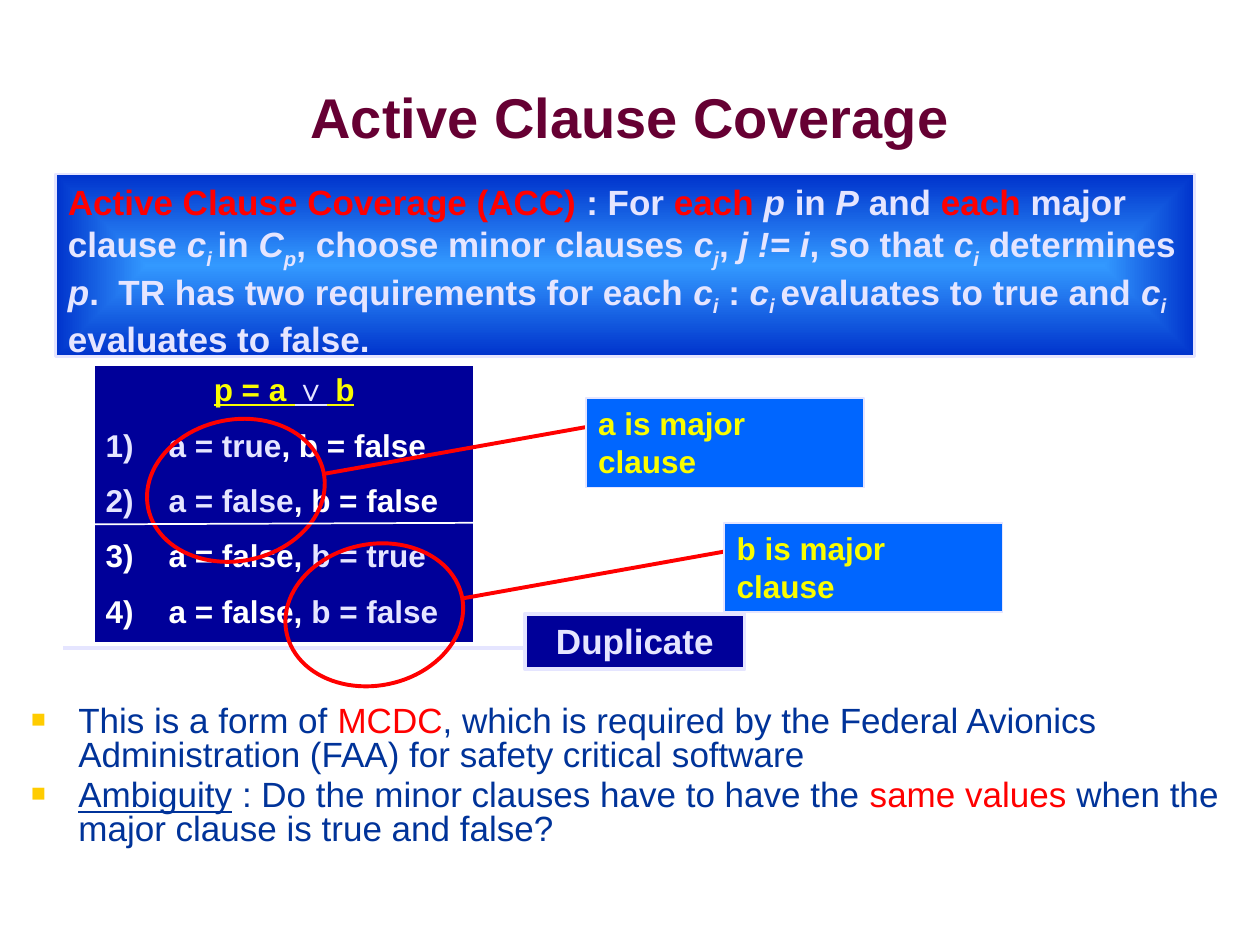
from lxml import etree
from pptx import Presentation
from pptx.dml.color import RGBColor
from pptx.enum.shapes import MSO_CONNECTOR as Line, MSO_SHAPE as Shape
from pptx.enum.text import MSO_ANCHOR as Anchor, PP_ALIGN as Align
from pptx.oxml.ns import qn
from pptx.util import Cm, Pt

FONT = "Arial"
RED, YELLOW, PALE, WHITE = "FF0000", "FAFD00", "E5E5FF", "FFFFFF"
NAVY, BLUE, TEXT_BLUE = "000099", "0066FF", "003399"
INDENT = 1.27


def rgb(value):
    return RGBColor.from_string(value)


def add_child(parent, tag, **attributes):
    return etree.SubElement(parent, qn(tag), attributes)


def add_runs(paragraph, runs, size, bold=True):
    for wording, color, marks in runs:
        run = paragraph.add_run()
        run.text = wording
        font = run.font
        font.name, font.size, font.bold = FONT, Pt(size), bold
        font.color.rgb = rgb(color)
        font.italic = "i" in marks
        font.underline = "u" in marks
        if "s" in marks:
            font._element.set("baseline", "-25000")


def set_indent(paragraph, indent):
    properties = paragraph._p.get_or_add_pPr()
    properties.set("marL", str(Cm(indent)))
    properties.set("indent", str(-Cm(indent)))
    return properties


def add_panel(slide, box, fill, line, width, kind=Shape.RECTANGLE):
    panel = slide.shapes.add_shape(kind, *map(Cm, box))
    panel.shadow.inherit = False
    if fill:
        panel.fill.solid()
        panel.fill.fore_color.rgb = rgb(fill)
    else:
        panel.fill.background()
    panel.line.color.rgb = rgb(line)
    panel.line.width = Pt(width)
    frame = panel.text_frame
    frame.word_wrap = True
    frame.vertical_anchor = Anchor.TOP
    frame.paragraphs[0].alignment = Align.LEFT
    return panel


def add_line(slide, start, end, color, width):
    line = slide.shapes.add_connector(Line.STRAIGHT, *map(Cm, (*start, *end)))
    line.line.color.rgb = rgb(color)
    line.line.width = Pt(width)
    add_child(line._element.spPr, "a:effectLst")


def add_title(slide, box):
    title = slide.shapes.title
    title.left, title.top, title.width, title.height = map(Cm, box)
    title.text_frame.vertical_anchor = Anchor.MIDDLE
    heading = title.text_frame.paragraphs[0]
    heading.alignment = Align.CENTER
    add_runs(heading, [("Active Clause Coverage", "660033", "")], 32)


def indexed(letter, index):
    return [(letter, PALE, "i"), (index, PALE, "is")]


def add_definition(slide, box):
    panel = add_panel(slide, box, BLUE, PALE, 1.5)
    panel.fill.gradient()
    for stop, color in zip(panel.fill.gradient_stops, ("3399FF", "0033CC")):
        stop.color.rgb = rgb(color)
    gradient = panel._element.spPr.find(qn("a:gradFill"))
    gradient.remove(gradient.find(qn("a:lin")))
    center = add_child(gradient, "a:path", path="shape")
    add_child(center, "a:fillToRect", l="50000", t="50000", r="50000", b="50000")
    add_runs(panel.text_frame.paragraphs[0], [
        ("Active Clause Coverage (ACC)", RED, ""), (" : For ", PALE, ""),
        ("each ", RED, ""), ("p", PALE, "i"), (" in ", PALE, ""),
        ("P", PALE, "i"), (" and ", PALE, ""), ("each", RED, ""),
        (" major clause ", PALE, ""), *indexed("c", "i "),
        ("in ", PALE, ""), *indexed("C", "p"),
        (", choose minor clauses ", PALE, ""), *indexed("c", "j"),
        (", ", PALE, ""), ("j != i", PALE, "i"),
        (", so that ", PALE, ""), *indexed("c", "i"),
        (" determines ", PALE, ""), ("p", PALE, "i"),
        (".  TR has two requirements for each ", PALE, ""), *indexed("c", "i"),
        (" : ", PALE, ""), *indexed("c", "i "),
        ("evaluates to true and ", PALE, ""), *indexed("c", "i"),
        (" evaluates to false.", PALE, ""),
    ], 20)


def add_cases(slide, box):
    left, top, width, _ = box
    frame = add_panel(slide, box, NAVY, WHITE, 2.25).text_frame
    predicate = frame.paragraphs[0]
    predicate.alignment = Align.CENTER
    set_indent(predicate, INDENT)
    add_runs(predicate, [("p = a ", YELLOW, "u"), ("∨", PALE, "u"),
                         (" b", YELLOW, "u")], 18)
    cases = [
        [("a = true", PALE, ""), (", b = false", WHITE, "")],
        [("a = false", PALE, ""), (", b = false", WHITE, "")],
        [("a = false, ", WHITE, ""), ("b = true", PALE, "")],
        [("a = false, ", WHITE, ""), ("b = false", PALE, "")],
    ]
    for case in cases:
        row = frame.add_paragraph()
        row.alignment = Align.LEFT
        add_child(set_indent(row, INDENT), "a:buAutoNum", type="arabicParenR")
        row.space_before = Pt(10)
        add_runs(row, case, 18)
    return (left, top + 3.23), (left + width, top + 3.2)


def add_duplicate(slide, left, top):
    add_line(slide, (left, top + 0.69), (left + 9.42, top + 0.69), PALE, 2.25)
    label = add_panel(slide, (left + 9.32, top, 4.42, 1.12), NAVY, PALE, 2.25)
    duplicate = label.text_frame.paragraphs[0]
    duplicate.alignment = Align.CENTER
    add_runs(duplicate, [("Duplicate", PALE, "")], 20)


def add_callout(slide, left, top, clause):
    add_line(slide, (left + 3.22, top + 1.52), (left + 8.48, top + 0.58), RED, 2.25)
    note = add_panel(slide, (left + 8.48, top, 5.61, 1.8), BLUE, PALE, 1)
    add_runs(note.text_frame.paragraphs[0],
             [(f"{clause} is major clause", YELLOW, "")], 18)
    ring = add_panel(slide, (left, top + 0.05, 2.85, 3.61), None, RED, 2.25, Shape.OVAL)
    ring.rotation = 78.5


def add_remarks(slide, box):
    frame = slide.shapes.add_textbox(*map(Cm, box)).text_frame
    frame.word_wrap = True
    remarks = [
        [("This is a form of ", TEXT_BLUE, ""), ("MCDC", RED, ""),
         (", which is required by the Federal Avionics Administration (FAA) "
          "for safety critical software", TEXT_BLUE, "")],
        [("Ambiguity", TEXT_BLUE, "u"),
         (" : Do the minor clauses have to have the ", TEXT_BLUE, ""),
         ("same values ", RED, ""),
         ("when the major clause is true and false?", TEXT_BLUE, "")],
    ]
    for position, remark in enumerate(remarks):
        bullet = frame.add_paragraph() if position else frame.paragraphs[0]
        properties = set_indent(bullet, 0.95)
        add_child(add_child(properties, "a:buClr"), "a:srgbClr", val="FFCC00")
        add_child(properties, "a:buSzPct", val="70000")
        add_child(properties, "a:buFont", typeface=FONT)
        add_child(properties, "a:buChar", char="■")
        bullet.line_spacing = 0.8
        if position:
            bullet.space_before = Pt(4)
        add_runs(bullet, remark, 20, bold=False)


def main():
    deck = Presentation()
    deck.slide_width, deck.slide_height = Cm(25.4), Cm(19.05)
    slide = deck.slides.add_slide(deck.slide_layouts[5])
    add_title(slide, (1.27, 0.76, 22.86, 3.18))
    divider = add_cases(slide, (1.88, 7.34, 7.7, 5.64))
    add_remarks(slide, (0.38, 14.12, 24.64, 3.81))
    add_definition(slide, (1.12, 3.51, 22.96, 3.68))
    add_duplicate(slide, 1.27, 12.37)
    add_callout(slide, 3.33, 8.03, "a")
    add_callout(slide, 6.12, 10.54, "b")
    add_line(slide, *divider, WHITE, 1)
    deck.save("out.pptx")


if __name__ == "__main__":
    main()
